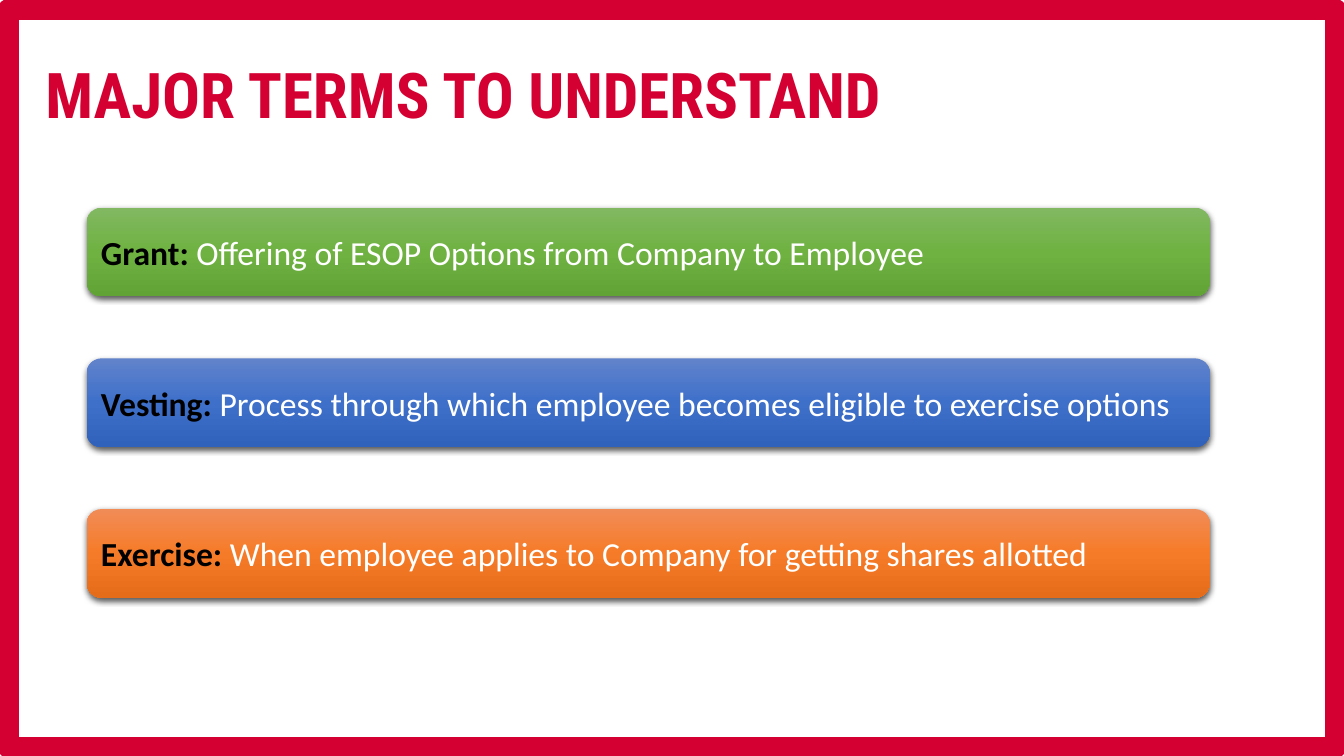
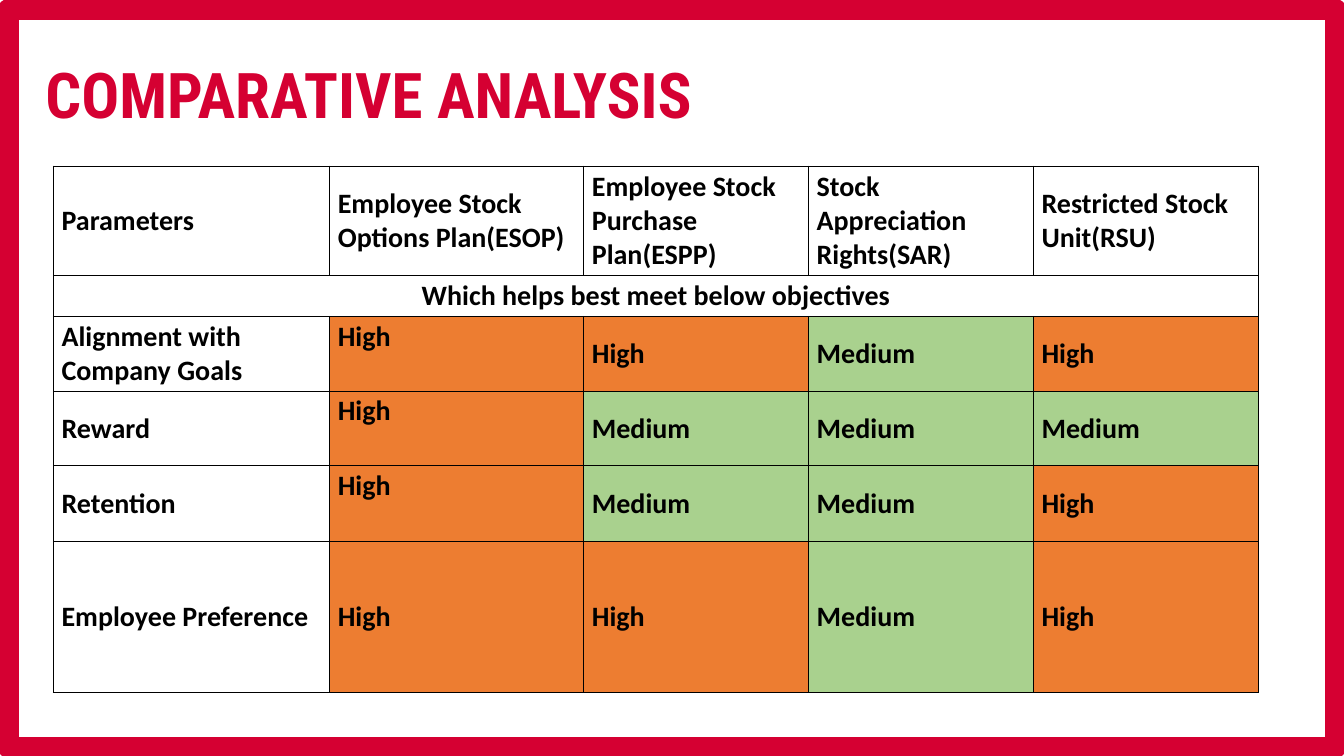
from lxml import etree
from pptx import Presentation
from pptx import util as u
from pptx.dml.color import RGBColor
from pptx.enum import shapes, text
from pptx.oxml import parse_xml
from pptx.oxml.ns import nsdecls, qn

WIDTH, HEIGHT = u.Inches(13.33), u.Inches(7.5)
SLIDE = (0, 0, WIDTH, HEIGHT)

RED = RGBColor(0xD5, 0x00, 0x32)
BLACK = RGBColor(0x00, 0x00, 0x00)
WHITE = RGBColor(0xFF, 0xFF, 0xFF)
ORANGE = RGBColor(0xED, 0x7D, 0x31)
GREEN = RGBColor(0xA9, 0xD1, 0x8E)
GREEN_BAR = (RGBColor(0x81, 0xB8, 0x61), RGBColor(0x6F, 0xB2, 0x42), RGBColor(0x62, 0xA3, 0x36))
BLUE_BAR = (RGBColor(0x61, 0x83, 0xCB), RGBColor(0x3E, 0x70, 0xCA), RGBColor(0x30, 0x62, 0xBB))
ORANGE_BAR = (RGBColor(0xF1, 0x8C, 0x57), RGBColor(0xF6, 0x7B, 0x28), RGBColor(0xE5, 0x6C, 0x19))

TITLE_FONT, BODY_FONT = "Roboto Condensed", "Calibri"
RATING_FILLS = {"High": ORANGE, "Medium": GREEN}

TERMS = [
    ("Grant: ", "Offering of ESOP Options from Company to Employee", GREEN_BAR),
    ("Vesting: ", "Process through which employee becomes eligible to exercise options", BLUE_BAR),
    ("Exercise: ", "When employee applies to Company for getting shares allotted", ORANGE_BAR),
]
COLUMN_SHARES = (274, 252, 223, 223, 223)
ROW_SHARES = (107, 41, 74, 74, 75, 150)
COMPARISON = [
    ("Parameters", "Employee Stock Options Plan(ESOP)", "Employee Stock Purchase Plan(ESPP)",
     "Stock Appreciation Rights(SAR)", "Restricted Stock Unit(RSU)"),
    ("Which helps best meet below objectives", "", "", "", ""),
    ("Alignment with Company Goals", "High", "High", "Medium", "High"),
    ("Reward", "High", "Medium", "Medium", "Medium"),
    ("Retention", "High", "Medium", "Medium", "High"),
    ("Employee Preference", "High", "High", "Medium", "High"),
]
OBJECTIVES_ROW = 1
TOP_CELLS = [(row, 1) for row in (2, 3, 4)]


def part(box, x, y, w, h):
    left, top, width, height = box
    return (left + int(width * x / 100), top + int(height * y / 100),
            int(width * w / 100), int(height * h / 100))


def add_run(p, words, size, color, bold=False, font=BODY_FONT):
    r = p.add_run()
    r.text = words
    r.font.name, r.font.size, r.font.bold = font, u.Pt(size), bold
    r.font.color.rgb = color


def add_titled_slide(prs, title):
    s = prs.slides.add_slide(prs.slide_layouts[5])
    frame = s.shapes.add_shape(shapes.MSO_SHAPE.RECTANGLE, *part(SLIDE, 0.6, 1.2, 98.8, 97.73))
    frame.shadow.inherit = False
    frame.fill.background()
    frame.line.color.rgb = RED
    frame.line.width = u.Pt(15)
    sp = s.shapes.title
    sp.left, sp.top, sp.width, sp.height = part(SLIDE, 2.63, 6.67, 89.57, 11.47)
    tf = sp.text_frame
    tf.word_wrap = True
    tf.auto_size = text.MSO_AUTO_SIZE.NONE
    tf.vertical_anchor = text.MSO_ANCHOR.MIDDLE
    p = tf.paragraphs[0]
    p.alignment = text.PP_ALIGN.LEFT
    add_run(p, title, 45, RED, True, TITLE_FONT)
    return s


def shade(sp, colors):
    sp.fill.gradient()
    sp.fill.gradient_angle = 270
    stops = sp._element.spPr.find(qn("a:gradFill")).find(qn("a:gsLst"))
    for stop in list(stops):
        stops.remove(stop)
    for i, color in enumerate(colors):
        stop = etree.SubElement(stops, qn("a:gs"), pos=str(i * 50000))
        etree.SubElement(stop, qn("a:srgbClr"), val=str(color))


def drop_shadow(sp):
    sp.shadow.inherit = False
    sp._element.spPr.find(qn("a:effectLst")).append(parse_xml(
        f'<a:outerShdw {nsdecls("a")} blurRad="{u.Pt(4.5)}" dist="{u.Pt(1.5)}" dir="5400000" '
        'algn="ctr" rotWithShape="0"><a:srgbClr val="000000"><a:alpha val="63000"/>'
        '</a:srgbClr></a:outerShdw>'))


def add_term_bars(s, box, terms, bar_share=22.74):
    pitch = (100 - bar_share) / (len(terms) - 1)
    for i, (term, meaning, colors) in enumerate(terms):
        sp = s.shapes.add_shape(shapes.MSO_SHAPE.ROUNDED_RECTANGLE,
                                *part(box, 0, i * pitch, 100, bar_share))
        shade(sp, colors)
        drop_shadow(sp)
        sp.line.fill.background()
        tf = sp.text_frame
        tf.word_wrap = True
        tf.vertical_anchor = text.MSO_ANCHOR.MIDDLE
        p = tf.paragraphs[0]
        p.alignment = text.PP_ALIGN.JUSTIFY
        add_run(p, term, 24, BLACK, True)
        add_run(p, meaning, 24, WHITE)


def add_borders(cell):
    tcPr = cell._tc.get_or_add_tcPr()
    for i, side in enumerate(("lnL", "lnR", "lnT", "lnB")):
        tcPr.insert(i, parse_xml(
            f'<a:{side} {nsdecls("a")} w="{u.Pt(1)}"><a:solidFill>'
            f'<a:srgbClr val="{BLACK}"/></a:solidFill></a:{side}>'))


def format_cell(cell, words, anchor, align):
    cell.margin_left = cell.margin_right = u.Inches(0.08)
    cell.margin_top = cell.margin_bottom = u.Inches(0.03)
    cell.vertical_anchor = anchor
    if words in RATING_FILLS:
        cell.fill.solid()
        cell.fill.fore_color.rgb = RATING_FILLS[words]
    else:
        cell.fill.background()
    add_borders(cell)
    if words:
        p = cell.text_frame.paragraphs[0]
        p.alignment = align
        add_run(p, words, 20, BLACK, True)


def add_comparison_table(s, box, rows):
    width, height = box[2:]
    table = s.shapes.add_table(len(rows), len(rows[0]), *box).table
    table.first_row = table.horz_banding = False
    for column, share in zip(table.columns, COLUMN_SHARES):
        column.width = int(width * share / sum(COLUMN_SHARES))
    for row, share in zip(table.rows, ROW_SHARES):
        row.height = int(height * share / sum(ROW_SHARES))
    table.cell(OBJECTIVES_ROW, 0).merge(table.cell(OBJECTIVES_ROW, len(rows[0]) - 1))
    for i, row in enumerate(rows):
        align = text.PP_ALIGN.CENTER if i == OBJECTIVES_ROW else text.PP_ALIGN.LEFT
        for j, words in enumerate(row):
            anchor = text.MSO_ANCHOR.TOP if (i, j) in TOP_CELLS else text.MSO_ANCHOR.MIDDLE
            format_cell(table.cell(i, j), words, anchor, align)


def main():
    prs = Presentation()
    prs.slide_width, prs.slide_height = WIDTH, HEIGHT
    s = add_titled_slide(prs, "MAJOR TERMS TO UNDERSTAND")
    add_term_bars(s, part(SLIDE, 6.45, 27.47, 83.57, 51.6), TERMS)
    s = add_titled_slide(prs, "COMPARATIVE ANALYSIS")
    add_comparison_table(s, part(SLIDE, 3.98, 22, 89.65, 69.47), COMPARISON)
    prs.save("out.pptx")


if __name__ == "__main__":
    main()
